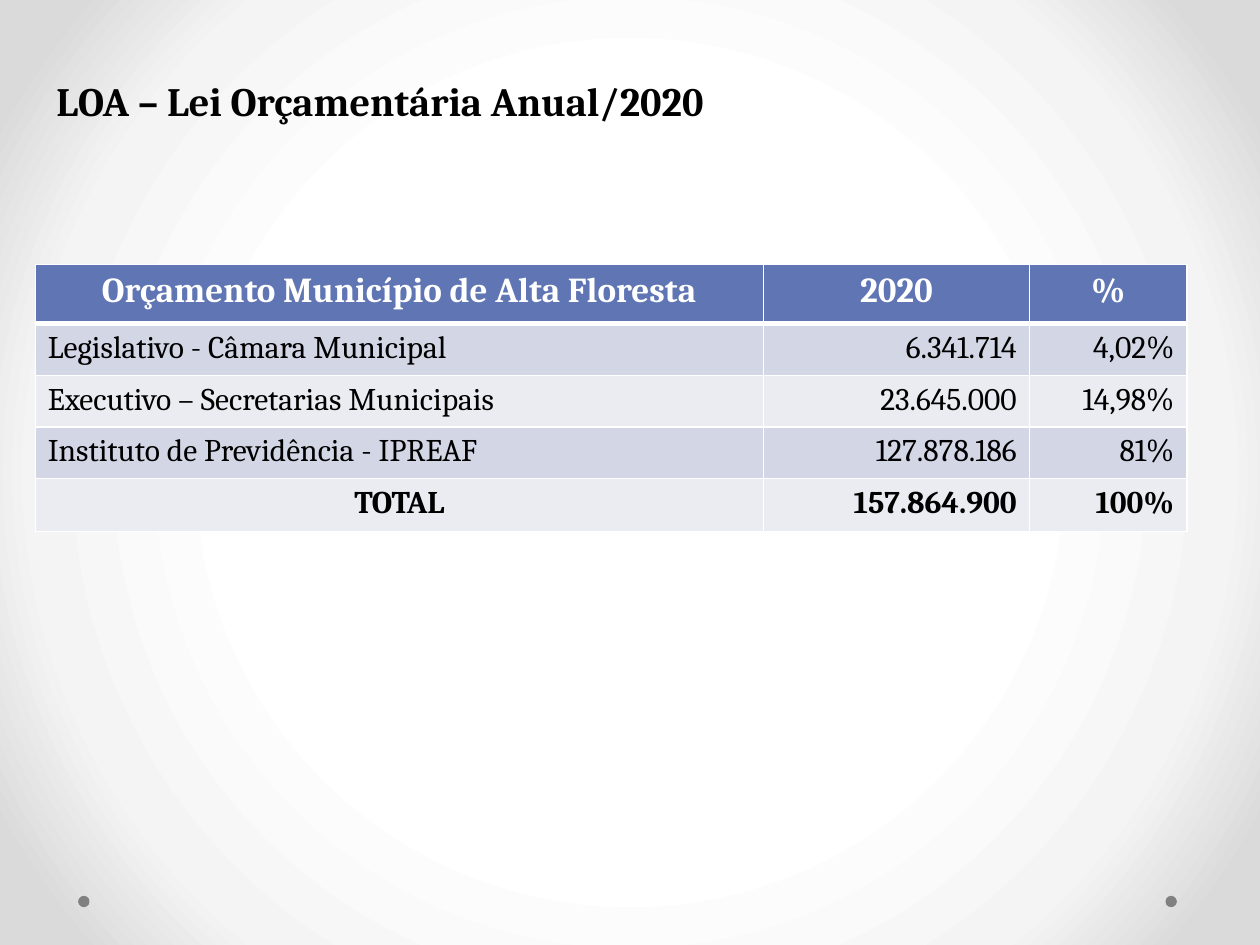
"""Budget slide: a title and a table of the 2020 municipal budget."""
from dataclasses import dataclass

from lxml.etree import SubElement
from pptx import Presentation
from pptx.dml.color import RGBColor
from pptx.enum.shapes import MSO_SHAPE
from pptx.enum.text import MSO_AUTO_SIZE, PP_ALIGN
from pptx.oxml import parse_xml
from pptx.oxml.ns import nsdecls, qn
from pptx.slide import Slide
from pptx.table import _Cell
from pptx.text.text import _Paragraph
from pptx.util import Inches, Pt

WIDTH, HEIGHT = Inches(10), Inches(7.5)
FONT = "Cambria"
BLACK = RGBColor(0x00, 0x00, 0x00)
WHITE = RGBColor(0xFF, 0xFF, 0xFF)
GREY = RGBColor(0x80, 0x80, 0x80)
HEADER_BLUE = RGBColor(0x60, 0x76, 0xB4)
BANDS = (RGBColor(0xD2, 0xD6, 0xE5), RGBColor(0xEA, 0xEC, 0xF2))
BACKDROP_STOPS = (
    (50, WHITE),
    (76, RGBColor(0xF4, 0xF4, 0xF4)),
    (92, RGBColor(0xDA, 0xDA, 0xDA)),
)
COLUMN_WIDTHS = (5.78, 2.11, 1.25)
ROW_HEIGHTS = (0.47, 0.41, 0.41, 0.41, 0.42)
DOT_SIZE = Inches(0.09)


@dataclass(frozen=True)
class TextStyle:
    """Size, colour and weight of a text."""

    size: int
    color: RGBColor = BLACK
    bold: bool = False


@dataclass(frozen=True)
class BudgetRow:
    """One table row with its look."""

    texts: tuple[str, str, str]
    fill: RGBColor
    style: TextStyle
    label_align: PP_ALIGN
    value_align: PP_ALIGN = PP_ALIGN.RIGHT
    bottom_line: int = 1


ENTRY = TextStyle(18)
BUDGET = (
    BudgetRow(("Orçamento Município de Alta Floresta", "2020", "%"), HEADER_BLUE,
              TextStyle(20, WHITE, True), PP_ALIGN.CENTER, PP_ALIGN.CENTER, 3),
    BudgetRow(("Legislativo - Câmara Municipal", "6.341.714", "4,02%"),
              BANDS[0], ENTRY, PP_ALIGN.JUSTIFY),
    BudgetRow(("Executivo – Secretarias Municipais", "23.645.000", "14,98%"),
              BANDS[1], ENTRY, PP_ALIGN.JUSTIFY),
    BudgetRow(("Instituto de Previdência - IPREAF", "127.878.186", "81%"),
              BANDS[0], ENTRY, PP_ALIGN.JUSTIFY),
    BudgetRow(("TOTAL", "157.864.900", "100%"),
              BANDS[1], TextStyle(18, bold=True), PP_ALIGN.CENTER),
)


def paint_backdrop(slide: Slide) -> None:
    """Fill the background with a circular gradient."""
    slide.background.fill.gradient()
    linear = next(slide.element.iter(qn("a:gradFill")))
    stops = "".join(
        f'<a:gs pos="{share * 1000}"><a:srgbClr val="{color}"/></a:gs>'
        for share, color in BACKDROP_STOPS
    )
    circular = parse_xml(
        f'<a:gradFill {nsdecls("a")} rotWithShape="1"><a:gsLst>{stops}</a:gsLst>'
        '<a:path path="circle"><a:fillToRect l="50000" t="50000" r="50000" b="50000"/>'
        "</a:path></a:gradFill>"
    )
    linear.getparent().replace(linear, circular)


def add_dot(slide: Slide, left_share: float, top_share: float) -> None:
    """Draw a small grey dot at shares of the slide's size."""
    dot = slide.shapes.add_shape(
        MSO_SHAPE.OVAL, int(WIDTH * left_share), int(HEIGHT * top_share), DOT_SIZE, DOT_SIZE
    )
    dot.shadow.inherit = False
    dot.fill.solid()
    dot.fill.fore_color.rgb = GREY
    dot.line.fill.background()


def write(paragraph: _Paragraph, text: str, style: TextStyle) -> None:
    """Set a paragraph's text and format its run."""
    paragraph.text = text
    font = paragraph.runs[0].font
    font.name = FONT
    font.size = Pt(style.size)
    font.bold = style.bold
    font.color.rgb = style.color


def add_title(slide: Slide, text: str) -> None:
    """Place the slide title."""
    title = slide.shapes.add_textbox(Inches(0.35), Inches(0.56), Inches(8.44), Inches(0.49))
    title.text_frame.word_wrap = True
    title.text_frame.auto_size = MSO_AUTO_SIZE.SHAPE_TO_FIT_TEXT
    write(title.text_frame.paragraphs[0], text, TextStyle(23, bold=True))


def set_borders(cell: _Cell, top: int, bottom: int) -> None:
    """Give a cell white borders, with top and bottom widths in points."""
    properties = cell._tc.get_or_add_tcPr()
    sides = (("a:lnL", 1), ("a:lnR", 1), ("a:lnT", top), ("a:lnB", bottom))
    for position, (side, width) in enumerate(sides):
        border = SubElement(properties, qn(side), w=str(Pt(width)))
        fill = SubElement(border, qn("a:solidFill"))
        SubElement(fill, qn("a:srgbClr"), val=str(WHITE))
        properties.insert(position, border)


def add_budget_table(slide: Slide) -> None:
    """Draw the budget table row by row."""
    table = slide.shapes.add_table(
        len(BUDGET), len(COLUMN_WIDTHS), Inches(0.28), Inches(2.1),
        Inches(sum(COLUMN_WIDTHS)), Inches(sum(ROW_HEIGHTS)),
    ).table
    for column, width in zip(table.columns, COLUMN_WIDTHS):
        column.width = Inches(width)
    top_line = 1
    for row, height, budget in zip(table.rows, ROW_HEIGHTS, BUDGET):
        row.height = Inches(height)
        alignments = (budget.label_align, budget.value_align, budget.value_align)
        for cell, text, alignment in zip(row.cells, budget.texts, alignments):
            cell.fill.solid()
            cell.fill.fore_color.rgb = budget.fill
            set_borders(cell, top_line, budget.bottom_line)
            paragraph = cell.text_frame.paragraphs[0]
            paragraph.alignment = alignment
            write(paragraph, text, budget.style)
        top_line = budget.bottom_line


def main() -> None:
    """Build and save the slide."""
    presentation = Presentation()
    presentation.slide_width, presentation.slide_height = WIDTH, HEIGHT
    slide = presentation.slides.add_slide(presentation.slide_layouts[6])
    paint_backdrop(slide)
    for left_share in (0.925, 0.062):
        add_dot(slide, left_share, 0.948)
    add_title(slide, "LOA – Lei Orçamentária Anual/2020")
    add_budget_table(slide)
    presentation.save("out.pptx")


if __name__ == "__main__":
    main()
